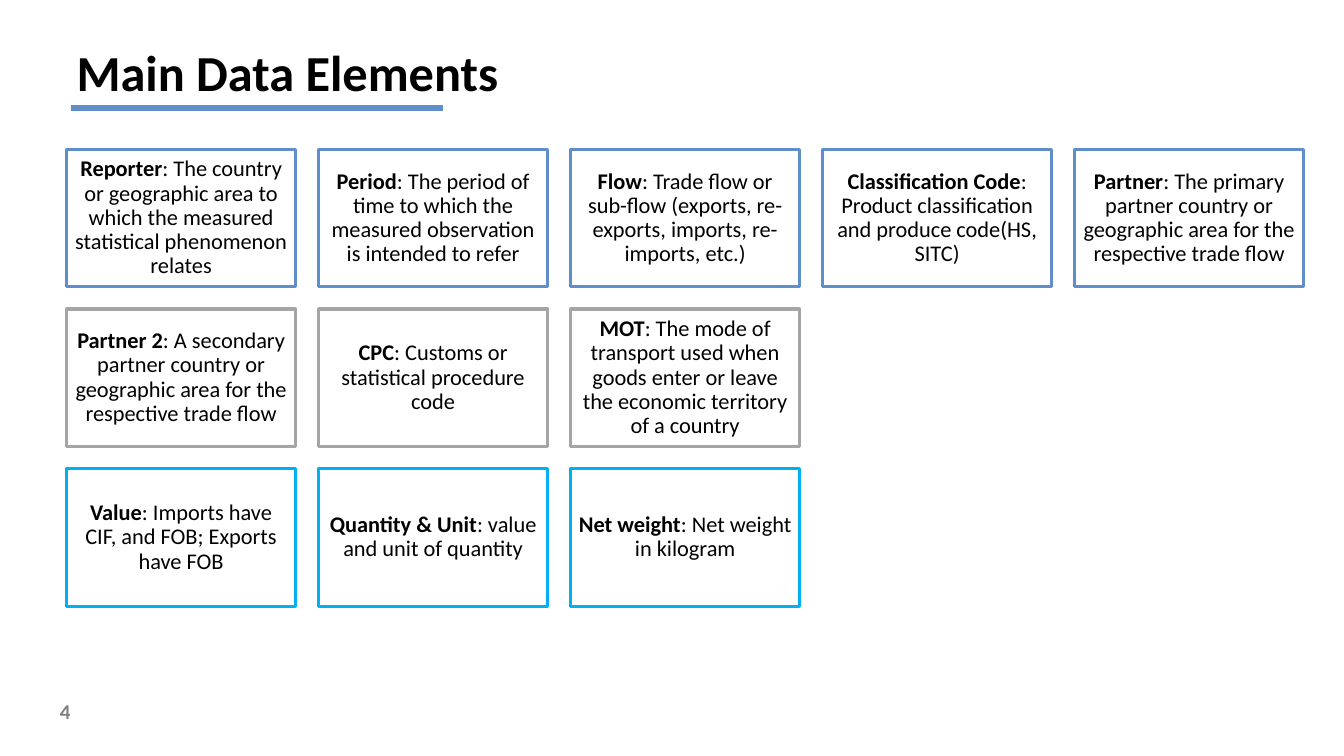
from lxml.etree import SubElement
from pptx import Presentation
from pptx.dml.color import RGBColor
from pptx.enum.shapes import MSO_CONNECTOR, MSO_SHAPE
from pptx.enum.text import MSO_ANCHOR, PP_ALIGN
from pptx.oxml.ns import qn
from pptx.util import Pt

COLORS = {
    "black": "000000",
    "white": "FFFFFF",
    "blue": "608ECA",
    "gray": "A5A5A5",
    "cyan": "00B0F0",
    "page": "808080",
}

ELEMENT_ROWS = [
    ("blue", [
        ("Reporter", "The country or geographic area to which the measured statistical phenomenon relates"),
        ("Period", "The period of time to which the measured observation is intended to refer"),
        ("Flow", "Trade flow or sub-flow (exports, re-exports, imports, re-imports, etc.)"),
        ("Classification Code", "Product classification and produce code(HS, SITC)"),
        ("Partner", "The primary partner country or geographic area for the respective trade flow"),
    ]),
    ("gray", [
        ("Partner 2", "A secondary partner country or geographic area for the respective trade flow"),
        ("CPC", "Customs or statistical procedure code"),
        ("MOT", "The mode of transport used when goods enter or leave the economic territory of a country"),
    ]),
    ("cyan", [
        ("Value", "Imports have CIF, and FOB; Exports have FOB"),
        ("Quantity & Unit", "value and unit of quantity"),
        ("Net weight", "Net weight in kilogram"),
    ]),
]

GRID_LEFT, GRID_TOP = 47.6, 106.7
CARD_WIDTH, CARD_HEIGHT = 163.6, 98.2
COLUMN_PITCH, ROW_PITCH = 180, 114.1


def color(name):
    return RGBColor.from_string(COLORS[name])


def write(shape, bold, plain="", *, size, ink="black", align=PP_ALIGN.CENTER, spacing=0.9, inset=None):
    """Fill a shape with one paragraph: a bold part, then a plain part."""
    frame = shape.text_frame
    frame.word_wrap = True
    frame.vertical_anchor = MSO_ANCHOR.MIDDLE
    if inset is not None:
        frame.margin_left = frame.margin_right = Pt(inset)
        frame.margin_top = frame.margin_bottom = Pt(inset)
    paragraph = frame.paragraphs[0]
    paragraph.alignment = align
    paragraph.line_spacing = spacing
    for text, is_bold in ((bold, True), (plain, False)):
        if text:
            run = paragraph.add_run()
            run.text = text
            run.font.name = "Calibri"
            run.font.size = Pt(size)
            run.font.bold = is_bold
            run.font.color.rgb = color(ink)


presentation = Presentation()
presentation.slide_width, presentation.slide_height = Pt(960), Pt(540)
slide = presentation.slides.add_slide(presentation.slide_layouts[6])
shapes = slide.shapes

title_rule = shapes.add_connector(MSO_CONNECTOR.STRAIGHT, Pt(50.6), Pt(77.2), Pt(316.6), Pt(77.2))
title_rule.line.color.rgb = color("blue")
title_rule.line.width = Pt(4.5)
SubElement(title_rule._element.spPr, qn("a:effectLst"))

title = shapes.add_textbox(Pt(47.6), Pt(33), Pt(828), Pt(42))
write(title, "Main Data Elements", size=36, align=PP_ALIGN.LEFT)

page_number = shapes.add_textbox(Pt(18.6), Pt(483.4), Pt(56), Pt(49))
write(page_number, "4", size=15, ink="page", spacing=1.0)

for row, (outline, elements) in enumerate(ELEMENT_ROWS):
    for column, (term, meaning) in enumerate(elements):
        card = shapes.add_shape(
            MSO_SHAPE.RECTANGLE,
            Pt(GRID_LEFT + column * COLUMN_PITCH), Pt(GRID_TOP + row * ROW_PITCH),
            Pt(CARD_WIDTH), Pt(CARD_HEIGHT))
        card.shadow.inherit = False
        card.fill.solid()
        card.fill.fore_color.rgb = color("white")
        card.line.color.rgb = color(outline)
        card.line.width = Pt(2.25)
        write(card, term, f": {meaning}", size=16, inset=5)

presentation.save("out.pptx")
